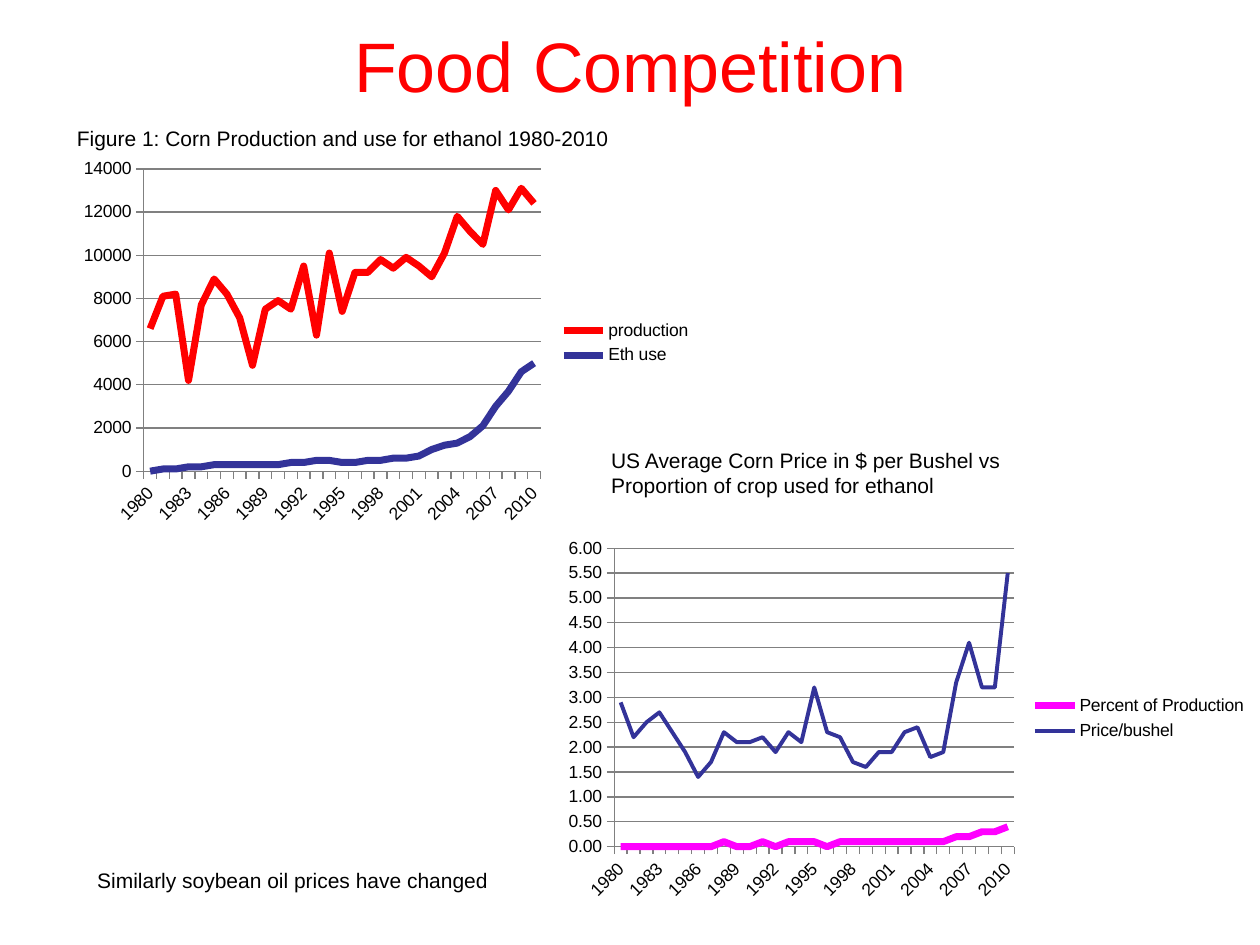
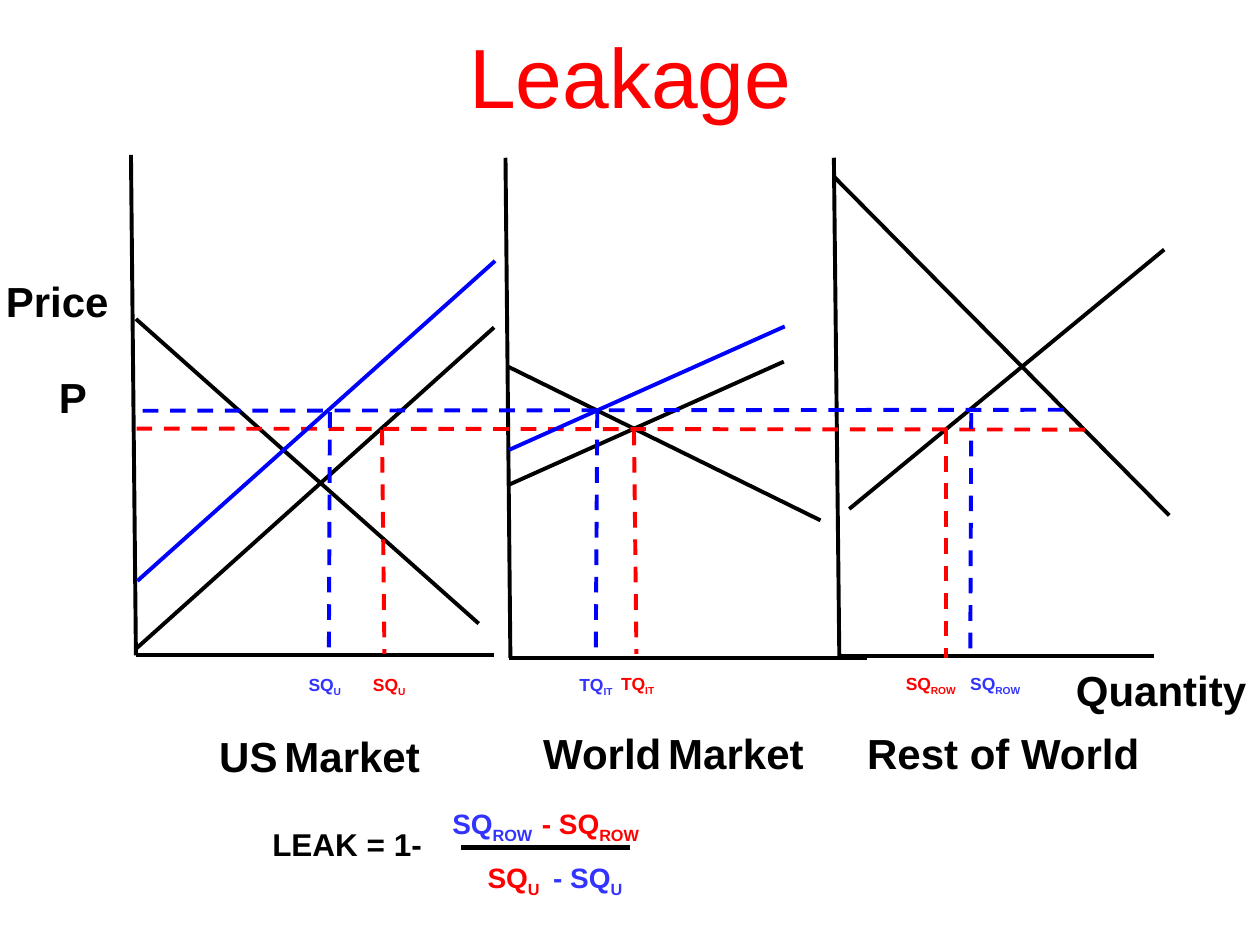
from lxml import etree
from pptx import Presentation
from pptx.chart.data import CategoryChartData
from pptx.dml.color import RGBColor
from pptx.enum.chart import XL_CHART_TYPE, XL_LEGEND_POSITION, XL_TICK_MARK
from pptx.enum.dml import MSO_LINE
from pptx.enum.shapes import MSO_CONNECTOR
from pptx.enum.text import MSO_ANCHOR, PP_ALIGN
from pptx.oxml.ns import qn
from pptx.util import Cm, Pt

FONT = "Arial"
BLACK, RED, BLUE = "000000", "FF0000", "0000FF"
LABEL_BLUE, NAVY, MAGENTA, GRAY = "3333FF", "333399", "FF00FF", "808080"

YEARS = [str(year) for year in range(1980, 2011)]
CHARTS = [
    {
        "box": (1.5, 3.1, 12.7, 7.62),
        "plot": {"x": 0.11, "y": 0.04, "w": 0.63, "h": 0.8},
        "axis": {"maximum": 14000, "step": 2000, "format": "0"},
        "series": [
            ("production", RED, 4,
             [6600, 8100, 8200, 4200, 7700, 8900, 8200, 7100, 4900, 7500, 7900,
              7500, 9500, 6300, 10100, 7400, 9200, 9200, 9800, 9400, 9900,
              9500, 9000, 10100, 11800, 11100, 10500, 13000, 12100, 13100, 12400]),
            ("Eth use", NAVY, 4,
             [0, 100, 100, 200, 200, 300, 300, 300, 300, 300, 300,
              400, 400, 500, 500, 400, 400, 500, 500, 600, 600,
              700, 1000, 1200, 1300, 1600, 2100, 3000, 3700, 4600, 5000]),
        ],
    },
    {
        "box": (11.25, 10.67, 14.15, 7.62),
        "plot": {"x": 0.08, "y": 0.05, "w": 0.57, "h": 0.79},
        "axis": {"maximum": 6, "step": 0.5, "format": "#,##0.00"},
        "series": [
            ("Percent of Production", MAGENTA, 4,
             [0, 0, 0, 0, 0, 0, 0, 0, 0.1, 0, 0,
              0.1, 0, 0.1, 0.1, 0.1, 0, 0.1, 0.1, 0.1, 0.1,
              0.1, 0.1, 0.1, 0.1, 0.1, 0.2, 0.2, 0.3, 0.3, 0.4]),
            ("Price/bushel", NAVY, 2.25,
             [2.9, 2.2, 2.5, 2.7, 2.3, 1.9, 1.4, 1.7, 2.3, 2.1, 2.1,
              2.2, 1.9, 2.3, 2.1, 3.2, 2.3, 2.2, 1.7, 1.6, 1.9,
              1.9, 2.3, 2.4, 1.8, 1.9, 3.3, 4.1, 3.2, 3.2, 5.5]),
        ],
    },
]
CAPTIONS = [
    (1.55, 2.54, 13, ["Figure 1: Corn Production and use for ethanol 1980-2010"]),
    (12.32, 9.02, 9.5, ["US Average Corn Price in $ per Bushel vs",
                        "Proportion of crop used for ethanol"]),
    (1.96, 17.48, 9.5, ["Similarly soybean oil prices have changed"]),
]

AXES_AND_CURVES = [
    (2.64, 3.12, 2.74, 13.21), (2.74, 13.21, 9.96, 13.21),
    (2.74, 6.43, 9.65, 12.57), (2.74, 13.08, 9.96, 6.6),
    (10.19, 3.18, 10.29, 13.26), (10.26, 13.26, 17.48, 13.26),
    (10.24, 7.39, 16.54, 10.49), (10.24, 9.78, 15.8, 7.29),
    (16.81, 3.18, 16.92, 13.26), (16.89, 13.23, 23.27, 13.23),
    (16.81, 3.56, 23.57, 10.39), (17.12, 10.26, 23.47, 5.03),
]
SHIFTED_SUPPLY = [(2.77, 11.71, 9.98, 5.26), (10.26, 9.07, 15.82, 6.58)]
BASE_GUIDES = [
    (21.87, 8.66, 2.69, 8.64), (7.7, 8.66, 7.75, 13.18),
    (12.78, 8.66, 12.83, 13.18), (19.08, 8.64, 19.08, 13.26),
]
SHIFTED_GUIDES = [
    (21.44, 8.26, 2.69, 8.28), (6.65, 8.31, 6.63, 13.16),
    (12.04, 8.31, 12.01, 13.16), (19.58, 8.33, 19.56, 13.16),
]
LINE_GROUPS = [
    (AXES_AND_CURVES, BLACK, 2.25, False),
    (BASE_GUIDES, RED, 2.25, True),
    (SHIFTED_SUPPLY, BLUE, 2.25, False),
    (SHIFTED_GUIDES, BLUE, 2.25, True),
    ([(9.3, 17.09, 12.7, 17.09)], BLACK, 3, False),
]


def plain(text, size, color=BLACK):
    return [(text, size, color, False)]


def symbol(base, subscript, size, color):
    return [(base, size, color, False), (subscript, size, color, True)]


def market(name):
    return plain(name, 24) + plain(" ", 14) + plain("Market", 24)


MARKET_LABELS = [
    (0.12, 5.56, 2.5, plain("Price", 24)),
    (1.19, 7.49, 1, plain("P", 24)),
    (21.69, 13.39, 3.7, plain("Quantity", 24)),
    (4.42, 14.73, 4.6, market("US")),
    (10.95, 14.66, 5.8, market("World")),
    (17.48, 14.66, 6, plain("Rest of World", 24)),
    (5.49, 16.64, 3.4, plain("LEAK = 1-", 18)),
    (9.12, 16.11, 4.6, symbol("SQ", "ROW", 16, LABEL_BLUE) + plain(" ", 20)
     + symbol("- SQ", "ROW", 16, RED)),
    (9.83, 16.92, 3.4, symbol("SQ", "U", 16, RED) + plain(" ", 28)
     + symbol("- SQ", "U", 16, LABEL_BLUE)),
] + [
    (left, top, 1.3, symbol(base, subscript, 10, color))
    for left, top, base, subscript, color in [
        (6.22, 13.59, "SQ", "U", LABEL_BLUE), (7.52, 13.59, "SQ", "U", RED),
        (11.68, 13.59, "TQ", "IT", LABEL_BLUE), (12.52, 13.57, "TQ", "IT", RED),
        (18.26, 13.57, "SQ", "ROW", RED), (19.56, 13.57, "SQ", "ROW", LABEL_BLUE),
    ]
]


def rgb(color):
    return RGBColor.from_string(color)


def style_font(font, size, color, bold=False):
    font.name = FONT
    font.size = Pt(size)
    font.bold = bold
    font.color.rgb = rgb(color)


def add_titled_slide(presentation, title, size, middle):
    slide = presentation.slides.add_slide(presentation.slide_layouts[0])
    subtitle = slide.placeholders[1].element
    subtitle.getparent().remove(subtitle)
    shape = slide.shapes.title
    shape.left, shape.top, shape.width, shape.height = (
        Cm(0.74), Cm(middle - 1.2), Cm(23.93), Cm(2.4))
    shape.text_frame.text = title
    shape.text_frame.vertical_anchor = MSO_ANCHOR.MIDDLE
    paragraph = shape.text_frame.paragraphs[0]
    paragraph.alignment = PP_ALIGN.CENTER
    style_font(paragraph.runs[0].font, size, RED)
    return slide


def add_text(slide, left, top, width, lines, bold):
    size = max(run[1] for line in lines for run in line)
    height = 0.043 * size * len(lines)
    frame = slide.shapes.add_textbox(Cm(left), Cm(top), Cm(width), Cm(height)).text_frame
    frame.word_wrap = True
    frame.margin_left = frame.margin_right = frame.margin_top = frame.margin_bottom = 0
    for index, line in enumerate(lines):
        paragraph = frame.paragraphs[0] if index == 0 else frame.add_paragraph()
        for text, run_size, color, is_subscript in line:
            run = paragraph.add_run()
            run.text = text
            style_font(run.font, run_size, color, bold)
            if is_subscript:
                run._r.get_or_add_rPr().set("baseline", "-25000")


def add_line(slide, ends, color, width, dashed):
    connector = slide.shapes.add_connector(MSO_CONNECTOR.STRAIGHT, *map(Cm, ends))
    connector.line.color.rgb = rgb(color)
    connector.line.width = Pt(width)
    if dashed:
        connector.line.dash_style = MSO_LINE.DASH
    etree.SubElement(connector._element.spPr, qn("a:effectLst"))


def place_plot(chart, plot):
    plot_area = chart._chartSpace.chart.plotArea
    for layout in plot_area.findall(qn("c:layout")):
        plot_area.remove(layout)
    layout = etree.Element(qn("c:layout"))
    plot_area.insert(0, layout)
    manual = etree.SubElement(layout, qn("c:manualLayout"))
    settings = {"layoutTarget": "inner", "xMode": "edge", "yMode": "edge", **plot}
    for name, value in settings.items():
        etree.SubElement(manual, qn(f"c:{name}")).set("val", str(value))


def slant_year_labels(axis):
    style_font(axis.tick_labels.font, 10, BLACK)
    axis._element.find(qn("c:txPr")).find(qn("a:bodyPr")).set("rot", "-2700000")
    skip = etree.Element(qn("c:tickLblSkip"))
    skip.set("val", "3")
    axis._element.find(qn("c:noMultiLvlLbl")).addprevious(skip)


def add_line_chart(slide, content):
    data = CategoryChartData()
    data.categories = YEARS
    for name, _, _, values in content["series"]:
        data.add_series(name, values)
    chart = slide.shapes.add_chart(
        XL_CHART_TYPE.LINE, *map(Cm, content["box"]), data).chart
    style_font(chart.font, 10, BLACK)
    chart.has_title = False
    chart.has_legend = True
    chart.legend.position = XL_LEGEND_POSITION.RIGHT
    chart.legend.include_in_layout = False
    chart.plots[0].vary_by_categories = False
    for series, (_, color, width, _) in zip(chart.plots[0].series, content["series"]):
        series.smooth = False
        series.format.line.color.rgb = rgb(color)
        series.format.line.width = Pt(width)

    value_axis = chart.value_axis
    value_axis.minimum_scale = 0
    value_axis.maximum_scale = content["axis"]["maximum"]
    value_axis.major_unit = content["axis"]["step"]
    value_axis.tick_labels.number_format = content["axis"]["format"]
    value_axis.tick_labels.number_format_is_linked = False
    value_axis.has_major_gridlines = True
    for axis in (chart.category_axis, value_axis):
        axis.major_tick_mark = XL_TICK_MARK.OUTSIDE
        axis.format.line.color.rgb = rgb(GRAY)
    value_axis.major_gridlines.format.line.color.rgb = rgb(GRAY)
    slant_year_labels(chart.category_axis)
    place_plot(chart, content["plot"])


def build_food_competition(presentation):
    slide = add_titled_slide(presentation, "Food Competition", 40, 1.31)
    for left, top, width, lines in CAPTIONS:
        add_text(slide, left, top, width, [plain(line, 12) for line in lines], False)
    for content in CHARTS:
        add_line_chart(slide, content)


def build_leakage(presentation):
    slide = add_titled_slide(presentation, "Leakage", 48, 1.52)
    for lines, color, width, dashed in LINE_GROUPS:
        for ends in lines:
            add_line(slide, ends, color, width, dashed)
    for left, top, width, runs in MARKET_LABELS:
        add_text(slide, left, top, width, [runs], True)


def main():
    presentation = Presentation()
    presentation.slide_width, presentation.slide_height = Cm(25.4), Cm(19.05)
    build_food_competition(presentation)
    build_leakage(presentation)
    presentation.save("out.pptx")


if __name__ == "__main__":
    main()
